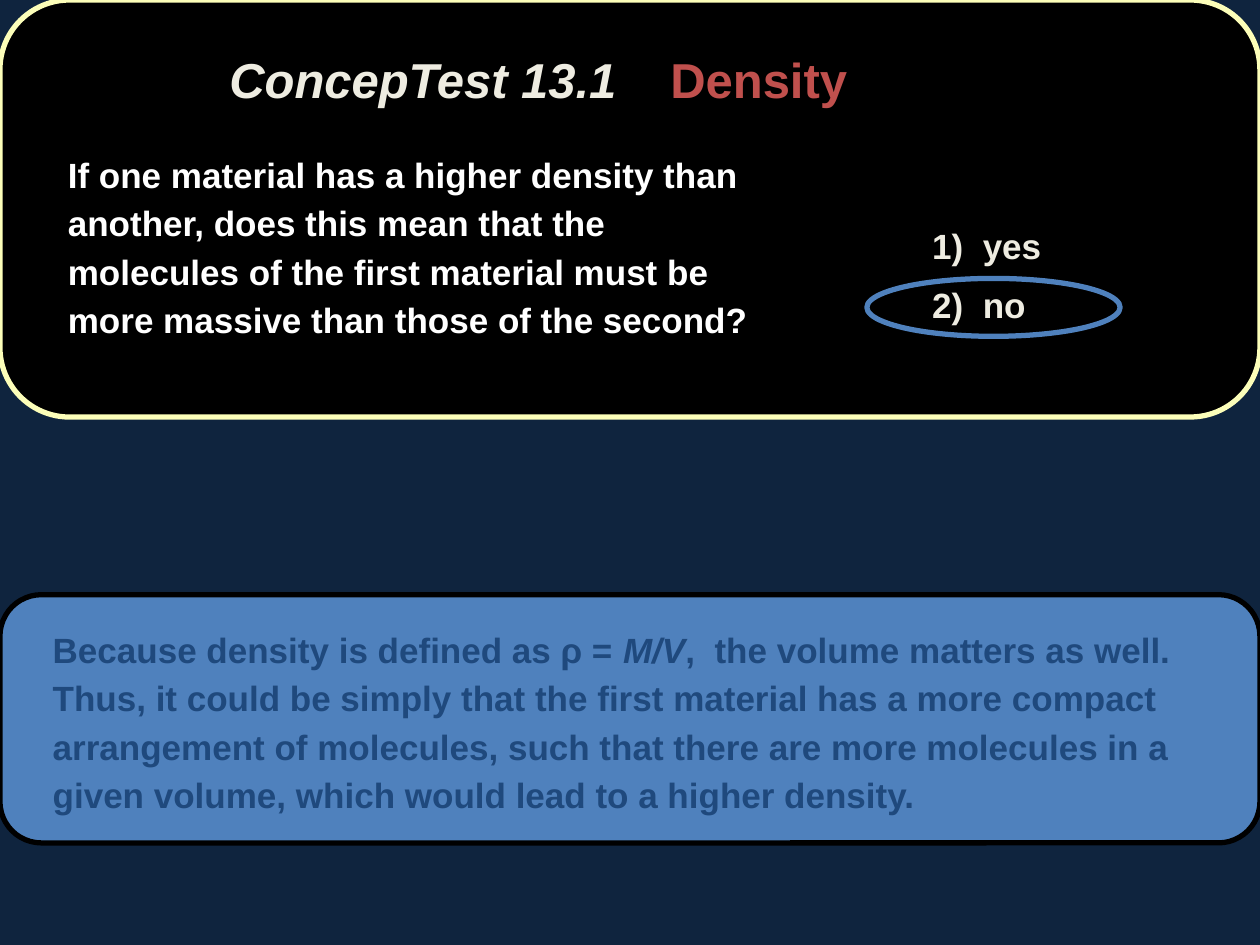
from pptx import Presentation
from pptx import util as u
from pptx.dml.color import RGBColor
from pptx.enum import shapes, text

NAVY = RGBColor(0x0F, 0x24, 0x3E)
BLUE = RGBColor(0x4F, 0x81, 0xBD)
DARK_BLUE = RGBColor(0x1F, 0x49, 0x7D)
BLACK = RGBColor(0, 0, 0)
WHITE = RGBColor(0xFF, 0xFF, 0xFF)
CREAM = RGBColor(0xEE, 0xEC, 0xE1)
YELLOW = RGBColor(0xFC, 0xFE, 0xB9)
RED = RGBColor(0xC0, 0x50, 0x4D)

presentation = Presentation()
presentation.slide_width, presentation.slide_height = u.Inches(10), u.Inches(7.5)

# Grid of 100 columns by 75 rows
COLUMN = presentation.slide_width / 100
ROW = presentation.slide_height / 75


def on_grid(left, top, width, height):
    """Turn columns and rows into slide lengths."""
    return [int(cells * unit) for cells, unit in
            zip((left, top, width, height), (COLUMN, ROW, COLUMN, ROW))]


def write(paragraph, words, color, size=20, italic=False):
    """Add a bold run of text to the paragraph."""
    run = paragraph.add_run()
    run.text = words
    run.font.name = "Arial"
    run.font.size = u.Pt(size)
    run.font.bold = True
    run.font.italic = italic
    run.font.color.rgb = color


slide = presentation.slides.add_slide(presentation.slide_layouts[5])
slide.background.fill.solid()
slide.background.fill.fore_color.rgb = NAVY

# Panels, and the ring around the right answer
ROUNDED, OVAL = shapes.MSO_SHAPE.ROUNDED_RECTANGLE, shapes.MSO_SHAPE.OVAL
for kind, place, fill, line in [
    (ROUNDED, (0, 47.2, 100, 19.7), BLUE, BLACK),
    (ROUNDED, (0, 0, 100, 33.1), BLACK, YELLOW),
    (OVAL, (68.8, 22.1, 20.1, 4.6), None, BLUE),
]:
    shape = slide.shapes.add_shape(kind, *on_grid(*place))
    shape.shadow.inherit = False
    shape.line.color.rgb = line
    shape.line.width = u.Pt(3)
    if fill is None:
        shape.fill.background()
    else:
        shape.fill.solid()
        shape.fill.fore_color.rgb = fill

# Title, in front of the panels
title = slide.shapes.title
title.left, title.top, title.width, title.height = on_grid(17.2, 3.4, 72.2, 5.7)
title.text_frame.vertical_anchor = text.MSO_ANCHOR.MIDDLE
heading = title.text_frame.paragraphs[0]
heading.alignment = text.PP_ALIGN.LEFT
write(heading, "ConcepTest 13.1 \t", CREAM, size=28, italic=True)
write(heading, "Density", RED, size=28)
title._element.getparent().append(title._element)

# Question, answers and explanation: each paragraph is a list of (words, italic)
question = [[("If one material has a higher density than another, does this mean that "
              "the molecules of the first material must be more massive than those "
              "of the second?", False)]]
answers = [[("1)  yes", False)], [("2)  no", False)]]
explanation = [[("Because density is defined as ρ = ", False), ("M/V", True),
                (",  the volume matters as well.  Thus, it could be simply that the "
                 "first material has a more compact arrangement of molecules, such "
                 "that there are more molecules in a given volume, which would lead "
                 "to a higher density.", False)]]

for paragraphs, place, color in [
    (question, (4.4, 11.2, 58.8, 16.1), WHITE),
    (answers, (73, 16.8, 18.5, 12.9), CREAM),
    (explanation, (3.2, 48.9, 95.6, 17.2), DARK_BLUE),
]:
    frame = slide.shapes.add_textbox(*on_grid(*place)).text_frame
    frame.word_wrap = True
    for index, runs in enumerate(paragraphs):
        paragraph = frame.add_paragraph() if index else frame.paragraphs[0]
        paragraph.line_spacing = 1.15
        paragraph.space_before = u.Pt(6)
        for words, italic in runs:
            write(paragraph, words, color, italic=italic)

presentation.save("out.pptx")
